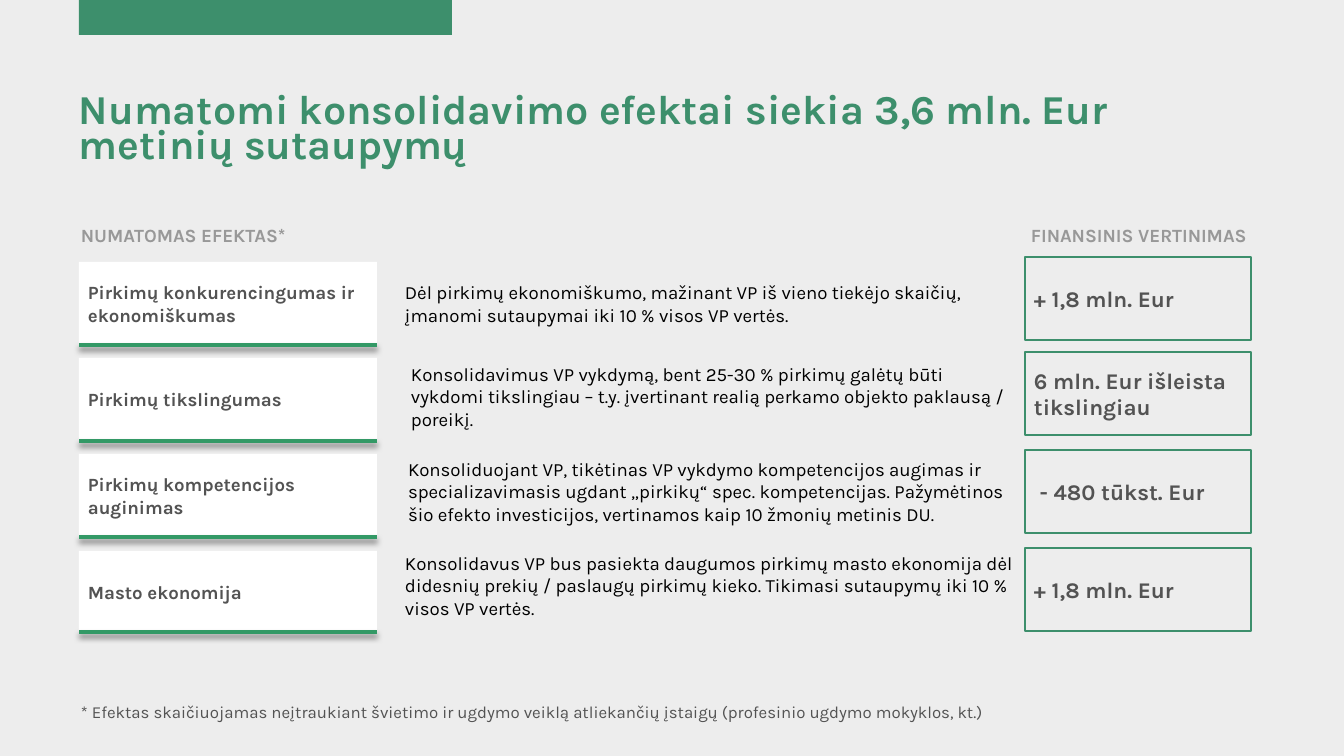
"""Build the slide on expected consolidation effects."""
from pptx import Presentation
from pptx.dml.color import RGBColor
from pptx.enum.shapes import MSO_CONNECTOR, MSO_SHAPE
from pptx.enum.text import MSO_ANCHOR, MSO_AUTO_SIZE, PP_ALIGN
from pptx.oxml import parse_xml
from pptx.oxml.ns import nsdecls
from pptx.util import Emu, Pt

SCALE = 914400 / 134.4
THEME = {
    "font": "Karla",
    "back": RGBColor.from_string("EDEDED"),
    "green": RGBColor.from_string("3D8F6C"),
    "rule": RGBColor.from_string("339966"),
    "white": RGBColor.from_string("FFFFFF"),
    "black": RGBColor.from_string("000000"),
    "dark": RGBColor.from_string("535353"),
    "gray": RGBColor.from_string("989898"),
    "title": 22, "value": 12, "body": 10, "foot": 9,
}
SHADOW = (
    f'<a:effectLst {nsdecls("a")}>'
    '<a:outerShdw blurRad="38100" dist="25400" dir="5400000" rotWithShape="0">'
    '<a:srgbClr val="000000"><a:alpha val="50000"/></a:srgbClr>'
    '</a:outerShdw></a:effectLst>'
)


def px(*sizes):
    return [Emu(round(size * SCALE)) for size in sizes]


def write(shape, text, size, color, bold=False, anchor=MSO_ANCHOR.MIDDLE, pad=(9, 5)):
    side, top = px(*pad)
    frame = shape.text_frame
    frame.text = text
    para = frame.paragraphs[0]
    para.font.color.rgb = THEME[color]
    formats = [
        (frame, {"word_wrap": True, "auto_size": MSO_AUTO_SIZE.NONE,
                 "vertical_anchor": anchor, "margin_left": side,
                 "margin_right": side, "margin_top": top, "margin_bottom": top}),
        (para, {"alignment": PP_ALIGN.LEFT}),
        (para.font, {"name": THEME["font"], "size": Pt(THEME[size]), "bold": bold}),
    ]
    for item, values in formats:
        for key, value in values.items():
            setattr(item, key, value)
    return para


deck = Presentation()
deck.slide_width, deck.slide_height = px(1344, 756)
slide = deck.slides.add_slide(deck.slide_layouts[5])
slide.background.fill.solid()
slide.background.fill.fore_color.rgb = THEME["back"]
shapes = slide.shapes

bar = shapes.add_shape(MSO_SHAPE.RECTANGLE, *px(79, 0, 373, 35))
bar.shadow.inherit = False
bar.fill.solid()
bar.fill.fore_color.rgb = THEME["green"]
bar.line.fill.background()

title = shapes.title
title.left, title.top, title.width, title.height = px(75, 93, 1168, 202)
head = write(title, "Numatomi konsolidavimo efektai siekia 3,6 mln. Eur metinių sutaupymų",
             "title", "green", True, MSO_ANCHOR.TOP, (4, 4))
head.line_spacing = 0.7

rows = [
    ("Pirkimų konkurencingumas ir ekonomiškumas",
     "Dėl pirkimų ekonomiškumo, mažinant VP iš vieno tiekėjo skaičių, "
     "įmanomi sutaupymai iki 10 % visos VP vertės.",
     "+ 1,8 mln. Eur", 262, 345, (396, 262), 257),
    ("Pirkimų tikslingumas",
     "Konsolidavimus VP vykdymą, bent 25-30 % pirkimų galėtų būti vykdomi "
     "tikslingiau – t.y. įvertinant realią perkamo objekto paklausą / poreikį.",
     "6 mln. Eur išleista tikslingiau", 358, 441, (402, 355), 352),
    ("Pirkimų kompetencijos auginimas",
     "Konsoliduojant VP, tikėtinas VP vykdymo kompetencijos augimas ir "
     "specializavimasis ugdant „pirkikų“ spec. kompetencijas. Pažymėtinos "
     "šio efekto investicijos, vertinamos kaip 10 žmonių metinis DU.",
     " - 480 tūkst. Eur", 454, 537, (399, 450), 450),
    ("Masto ekonomija",
     "Konsolidavus VP bus pasiekta daugumos pirkimų masto ekonomija dėl "
     "didesnių prekių / paslaugų pirkimų kieko. Tikimasi sutaupymų iki "
     "10 % visos VP vertės.",
     "+ 1,8 mln. Eur", 551, 632, (396, 544), 548),
]
for name, note, value, top, base, spot, level in rows:
    card = shapes.add_shape(MSO_SHAPE.RECTANGLE, *px(79, top, 298, 83))
    card.shadow.inherit = False
    card.fill.solid()
    card.fill.fore_color.rgb = THEME["white"]
    card.line.fill.background()
    write(card, name, "body", "dark", True)

    rule = shapes.add_connector(MSO_CONNECTOR.STRAIGHT, *px(377, base, 79, base))
    rule.line.color.rgb = THEME["rule"]
    rule.line.width = Pt(2)
    rule._element.spPr.append(parse_xml(SHADOW))

    write(shapes.add_textbox(*px(*spot, 626, 83)), note, "body", "black")

    box = shapes.add_shape(MSO_SHAPE.RECTANGLE, *px(1025, level, 226, 83))
    box.shadow.inherit = False
    box.fill.background()
    box.line.color.rgb = THEME["green"]
    box.line.width = Pt(1.5)
    write(box, value, "value", "dark", True)

for text, left, width in [("NUMATOMAS EFEKTAS*", 72, 242),
                          ("FINANSINIS VERTINIMAS", 1022, 265)]:
    label = shapes.add_textbox(*px(left, 219, width, 52))
    write(label, text, "body", "gray", True, MSO_ANCHOR.TOP)

foot = shapes.add_textbox(*px(72, 686, 1215, 52))
write(foot, "* Efektas skaičiuojamas neįtraukiant švietimo ir ugdymo veiklą "
      "atliekančių įstaigų (profesinio ugdymo mokyklos, kt.)", "foot", "dark")

deck.save("out.pptx")
